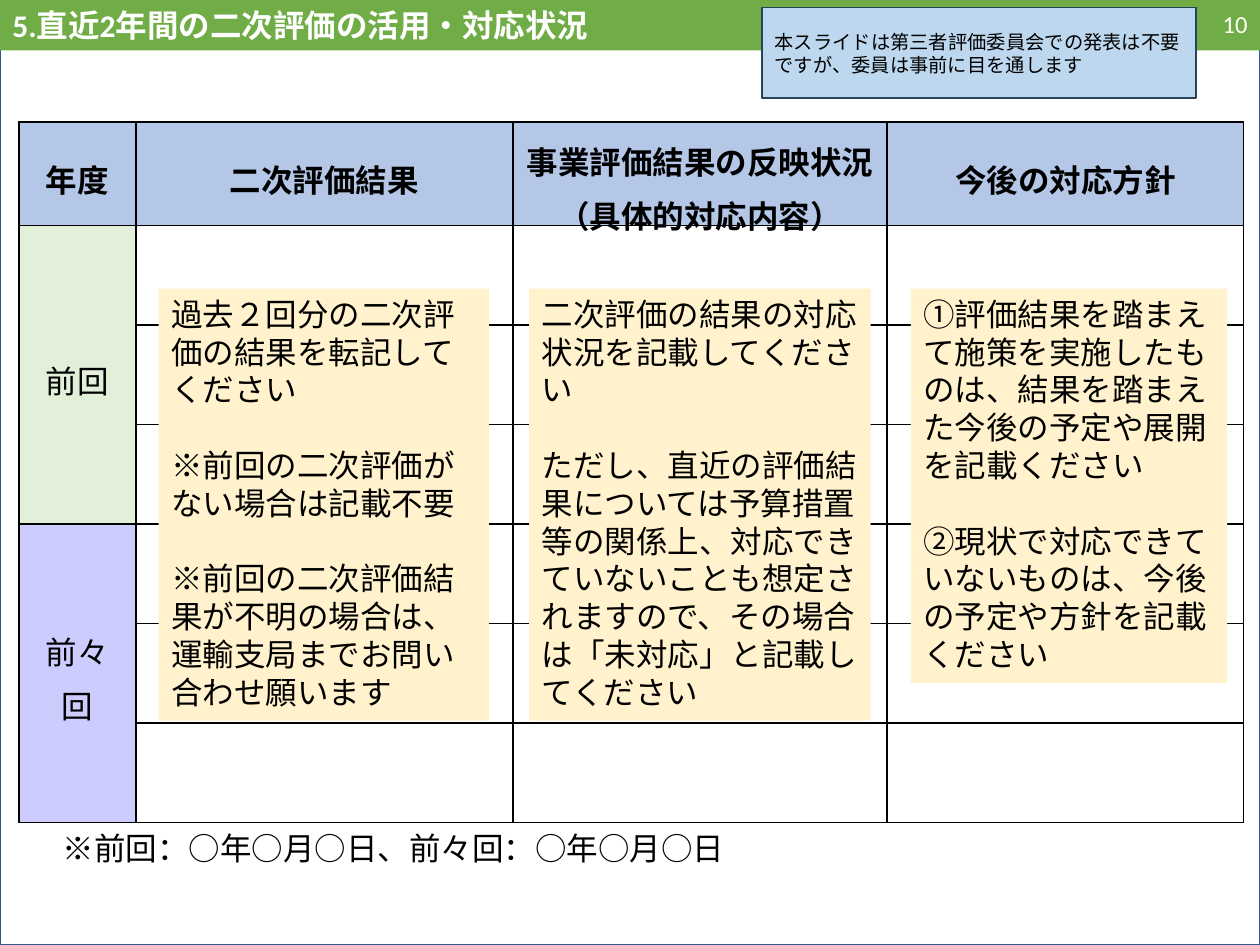
"""Build the slide on how the last two secondary evaluations were used."""
import pptx
import pptx.dml.color
import pptx.enum.shapes
import pptx.enum.text
import pptx.oxml
import pptx.oxml.ns
import pptx.util

Inches = pptx.util.Inches
ALIGN = pptx.enum.text.PP_ALIGN
ANCHOR = pptx.enum.text.MSO_ANCHOR

COLUMN_WIDTHS = [0.93, 2.99, 2.97, 2.83]
HEADER_HEIGHT, ROW_HEIGHT, ROWS_PER_PERIOD = 0.7, 0.79, 3
HEADINGS = [
    ["年度"],
    ["二次評価結果"],
    ["事業評価結果の反映状況", "（具体的対応内容）"],
    ["今後の対応方針"],
]
PERIODS = [("前回", "E2F0D9"), ("前々回", "CCCCFF")]
GUIDES = [
    (1.26, 2.62, 3.43, [
        "過去２回分の二次評価の結果を転記してください",
        "※前回の二次評価がない場合は記載不要",
        "※前回の二次評価結果が不明の場合は、運輸支局までお問い合わせ願います",
    ]),
    (4.2, 2.71, 3.43, [
        "二次評価の結果の対応状況を記載してください",
        "ただし、直近の評価結果については予算措置等の関係上、対応できていないことも"
        "想定されますので、その場合は「未対応」と記載してください",
    ]),
    (7.23, 2.51, 3.13, [
        "①評価結果を踏まえて施策を実施したものは、結果を踏まえた今後の予定や展開を記載ください",
        "②現状で対応できていないものは、今後の予定や方針を記載ください",
    ]),
]


def color(hex_code):
    return pptx.dml.color.RGBColor.from_string(hex_code)


def set_values(target, values):
    for name, value in values.items():
        setattr(target, name, value)


def write(frame, lines, size=18, ink="000000", bold=False, **layout):
    for index, line in enumerate(lines):
        paragraph = frame.paragraphs[0] if index == 0 else frame.add_paragraph()
        set_values(paragraph, {"alignment": ALIGN.LEFT, **layout})
        if index == 0:
            paragraph.space_before = pptx.util.Pt(0)
        run = paragraph.add_run()
        run.text = line
        set_values(run.font, {"name": "Calibri", "size": pptx.util.Pt(size), "bold": bold})
        run.font.color.rgb = color(ink)


def add_panel(slide, box, fill=None, outline=None, lines=(), anchor=ANCHOR.TOP, **text):
    panel = slide.shapes.add_shape(
        pptx.enum.shapes.MSO_SHAPE.RECTANGLE, *map(Inches, box))
    panel.shadow.inherit = False
    if fill:
        panel.fill.solid()
        panel.fill.fore_color.rgb = color(fill)
    else:
        panel.fill.background()
    if outline:
        panel.line.color.rgb = color(outline)
        panel.line.width = pptx.util.Pt(1)
    else:
        panel.line.fill.background()
    set_values(panel.text_frame, {"word_wrap": True, "vertical_anchor": anchor})
    write(panel.text_frame, lines, **text)


def add_label(slide, box, line, anchor=ANCHOR.TOP, **text):
    label = slide.shapes.add_textbox(*map(Inches, box))
    set_values(label.text_frame, {"word_wrap": True, "vertical_anchor": anchor})
    write(label.text_frame, [line], **text)


def add_borders(cell):
    properties = cell._tc.get_or_add_tcPr()
    for position, side in enumerate(("lnL", "lnR", "lnT", "lnB")):
        border = pptx.oxml.parse_xml(
            f'<a:{side} {pptx.oxml.ns.nsdecls("a")} w="12700"><a:solidFill>'
            f'<a:srgbClr val="000000"/></a:solidFill></a:{side}>')
        properties.insert(position, border)


def fill_cell(cell, lines, fill, bold=False):
    cell.fill.solid()
    cell.fill.fore_color.rgb = color(fill)
    cell.vertical_anchor = ANCHOR.MIDDLE
    write(cell.text_frame, lines, bold=bold, alignment=ALIGN.CENTER, line_spacing=1.2)


def add_evaluation_table(slide):
    heights = [HEADER_HEIGHT] + [ROW_HEIGHT] * ROWS_PER_PERIOD * len(PERIODS)
    box = (0.15, 0.97, sum(COLUMN_WIDTHS), sum(heights))
    table = slide.shapes.add_table(
        len(heights), len(COLUMN_WIDTHS), *map(Inches, box)).table
    set_values(table, {"first_row": False, "horz_banding": False})
    for column, width in zip(table.columns, COLUMN_WIDTHS):
        column.width = Inches(width)
    for row, height in zip(table.rows, heights):
        row.height = Inches(height)
    for cell in table.iter_cells():
        cell.fill.background()
        add_borders(cell)
    for column, heading in enumerate(HEADINGS):
        fill_cell(table.cell(0, column), heading, "B4C7E7", bold=True)
    for index, (period, fill) in enumerate(PERIODS):
        top = 1 + index * ROWS_PER_PERIOD
        cell = table.cell(top, 0)
        cell.merge(table.cell(top + ROWS_PER_PERIOD - 1, 0))
        fill_cell(cell, [period], fill)
        cell._tc.get_or_add_tcPr().set("vert", "eaVert")


def main():
    deck = pptx.Presentation()
    set_values(deck, {"slide_width": Inches(10), "slide_height": Inches(7.5)})
    slide = deck.slides.add_slide(deck.slide_layouts[6])
    add_panel(slide, (0, 0, 10, 7.5), outline="2F5597")
    add_panel(slide, (0, 0, 10, 0.4), "70AD47",
              lines=["5.直近2年間の二次評価の活用・対応状況"], ink="FFFFFF", bold=True)
    add_label(slide, (8.82, 0, 1.18, 0.37), "10", ANCHOR.MIDDLE,
              size=14, ink="FFFFFF", alignment=ALIGN.RIGHT)
    add_evaluation_table(slide)
    for left, width, height, lines in GUIDES:
        add_panel(slide, (left, 2.29, width, height), "FFF2CC", lines=lines,
                  space_before=pptx.util.Pt(21.6))
    add_label(slide, (0.4, 6.53, 8.51, 0.4), "※前回：○年○月○日、前々回：○年○月○日")
    add_panel(slide, (6.05, 0.06, 3.44, 0.72), "BDD7EE", "28445D",
              ["本スライドは第三者評価委員会での発表は不要ですが、委員は事前に目を通します"],
              ANCHOR.MIDDLE, size=11)
    deck.save("out.pptx")


if __name__ == "__main__":
    main()
